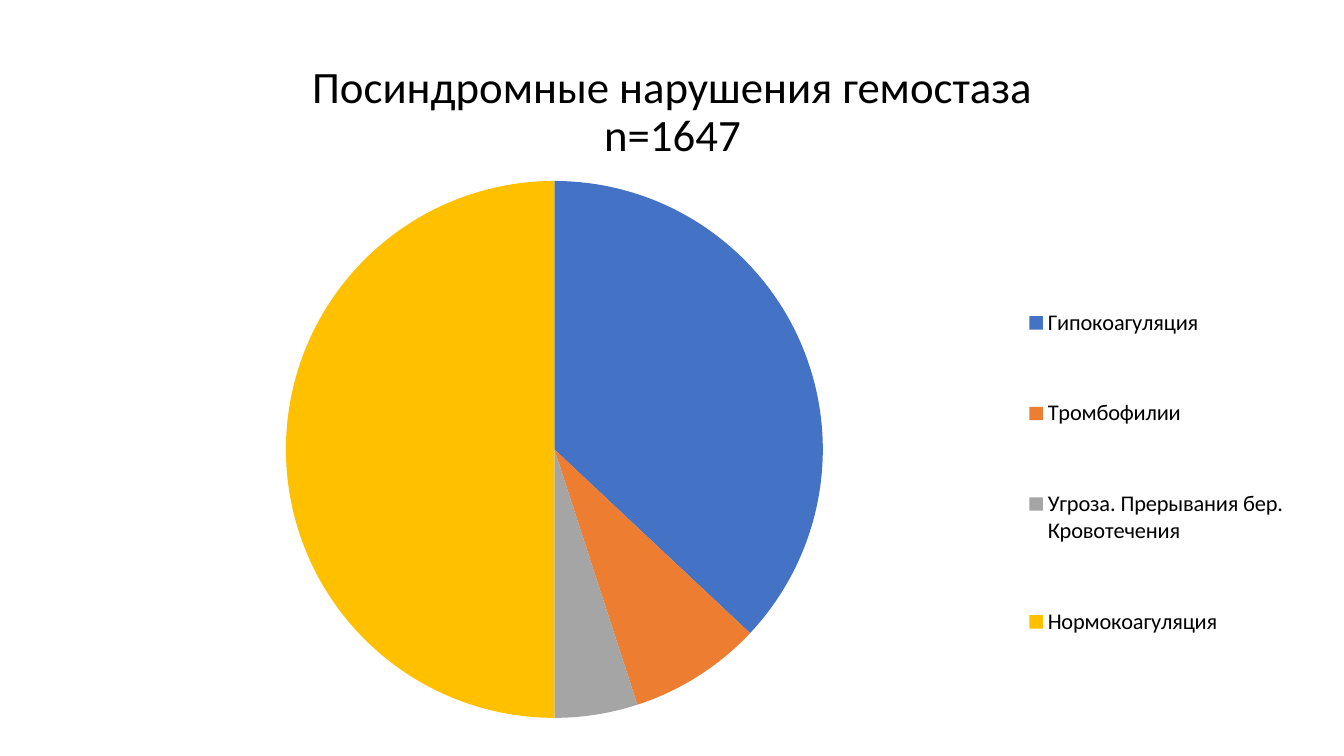
from lxml import etree
from pptx import Presentation
from pptx import util as u
from pptx.chart.data import CategoryChartData
from pptx.dml.color import RGBColor
from pptx.enum import chart as charts, text

TITLE = "Посиндромные нарушения гемостаза\vn=1647"
FONT = "Calibri"
SYNDROMES = [
    ("Гипокоагуляция", 37, "4472C4"),
    ("Тромбофилии", 8, "ED7D31"),
    ("Угроза. Прерывания бер. Кровотечения", 5, "A5A5A5"),
    ("Нормокоагуляция", 50, "FFC000"),
]

# left, top, width, height in px
SLIDE_SIZE = (1344, 756)
TITLE_BOX = (93, 40, 1159, 146)
CHART_BOX = (93, 167, 1200, 565)
PIE_BOX = (286, 181, 537, 537)
LEGEND_BOX = (1020, 246, 273, 453)


def px(length):
    return u.Emu(round(length * 914400 / 100.8))


def color(value):
    return RGBColor.from_string(value)


def style_font(font, size):
    font.name = FONT
    font.size = u.Pt(size)
    font.color.rgb = color("000000")


def add_text(slide, content, box, size, align, line_spacing):
    frame = slide.shapes.add_textbox(*map(px, box)).text_frame
    frame.word_wrap = True
    frame.vertical_anchor = text.MSO_ANCHOR.MIDDLE
    paragraph = frame.paragraphs[0]
    paragraph.text = content
    paragraph.alignment = align
    paragraph.line_spacing = line_spacing
    for run in paragraph.runs:
        style_font(run.font, size)


def manual_layout(box, inner=False):
    """Layout element placing a chart part at a slide position."""
    left, top, width, height = CHART_BOX
    values = {
        "xMode": "edge",
        "yMode": "edge",
        "x": round((box[0] - left) / width, 4),
        "y": round((box[1] - top) / height, 4),
        "w": round(box[2] / width, 4),
        "h": round(box[3] / height, 4),
    }
    if inner:
        values = {"layoutTarget": "inner", **values}
    namespace = "{http://schemas.openxmlformats.org/drawingml/2006/chart}"
    layout = etree.Element(namespace + "layout")
    manual = etree.SubElement(layout, namespace + "manualLayout")
    for name, value in values.items():
        etree.SubElement(manual, namespace + name, val=str(value))
    return layout


def add_pie(slide):
    names, values, fills = zip(*SYNDROMES)
    data = CategoryChartData()
    data.categories = names
    data.add_series("Series 1", values)
    chart = slide.shapes.add_chart(
        charts.XL_CHART_TYPE.PIE, *map(px, CHART_BOX), data
    ).chart
    style_font(chart.font, 10)
    chart.has_title = False
    plot = chart.plots[0]
    plot.vary_by_categories = True
    for index, fill in enumerate(fills):
        slice_fill = plot.series[0].points[index].format.fill
        slice_fill.solid()
        slice_fill.fore_color.rgb = color(fill)

    chart.has_legend = True
    legend = chart.legend
    legend.position = charts.XL_LEGEND_POSITION.RIGHT
    legend.include_in_layout = False
    style_font(legend.font, 16)

    plot_area = chart.element.find(".//{*}plotArea")
    legend_element = chart.element.find(".//{*}legend")
    for parent in (plot_area, legend_element):
        for old_layout in parent.findall("{*}layout"):
            parent.remove(old_layout)
    plot_area.insert(0, manual_layout(PIE_BOX, inner=True))
    legend_element.find("{*}legendPos").addnext(manual_layout(LEGEND_BOX))


def main():
    presentation = Presentation()
    presentation.slide_width, presentation.slide_height = map(px, SLIDE_SIZE)
    slide = presentation.slides.add_slide(presentation.slide_layouts[6])
    add_text(slide, TITLE, TITLE_BOX, size=32,
             align=text.PP_ALIGN.CENTER, line_spacing=0.9)
    add_pie(slide)
    presentation.save("out.pptx")


if __name__ == "__main__":
    main()
